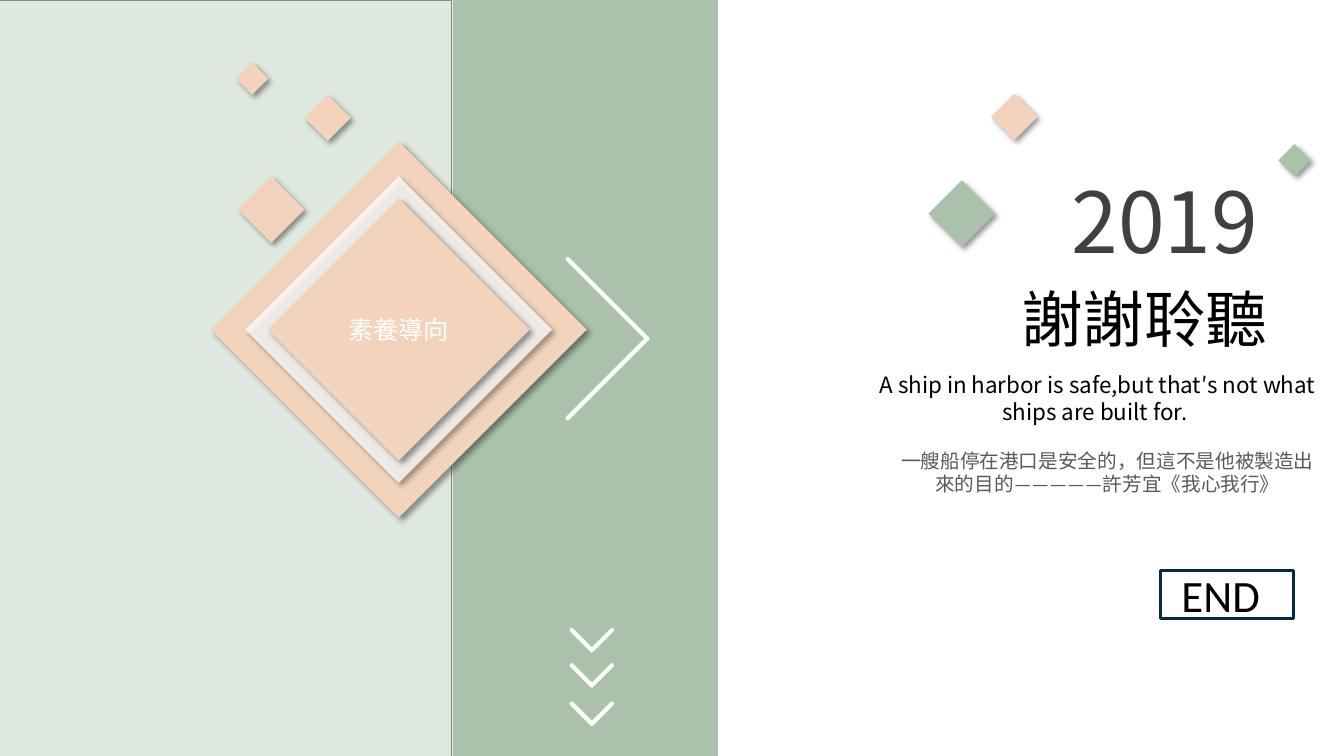
"""Build the closing slide: green panels, peach diamonds, chevrons and thanks."""
from dataclasses import dataclass

from lxml.etree import SubElement
from pptx import Presentation
from pptx.dml.color import RGBColor
from pptx.enum.shapes import MSO_CONNECTOR, MSO_SHAPE
from pptx.enum.text import MSO_ANCHOR, MSO_AUTO_SIZE, PP_ALIGN
from pptx.oxml.ns import qn
from pptx.util import Inches, Pt


@dataclass(frozen=True)
class Theme:
    green: str = "AAC2AC"
    edge: str = "7E907F"
    peach: str = "F3D3BC"
    white: str = "FFFFFF"
    black: str = "000000"
    charcoal: str = "404040"
    gray: str = "595959"
    navy: str = "072942"
    sans: str = "Noto Sans CJK SC"
    latin: str = "Calibri"
    serif: str = "TeX Gyre Schola"
    year: int = 60
    thanks: int = 44
    end: int = 32
    label: int = 18
    quote: int = 16
    source: int = 14


theme = Theme()
presentation = Presentation()
presentation.slide_width = Inches(13.33)
presentation.slide_height = Inches(7.5)
slide = presentation.slides.add_slide(presentation.slide_layouts[6])
cell = presentation.slide_height / 75


def add_block(preset, left, top, width, height, fill=None, opacity=100):
    """Add a preset shape in grid cells, with an optional fill and no line."""
    shape = slide.shapes.add_shape(preset, *(round(n * cell) for n in (left, top, width, height)))
    shape.shadow.inherit = False
    shape.line.fill.background()
    if fill is None:
        shape.fill.background()
        return shape
    shape.fill.solid()
    shape.fill.fore_color.rgb = RGBColor.from_string(fill)
    if opacity < 100:
        color = shape._element.spPr.find(qn("a:solidFill"))[0]
        SubElement(color, qn("a:alpha"), val=str(opacity * 1000))
    return shape


def write_text(shape, text, font, size, color, alignment):
    """Write one formatted run in the first paragraph of a shape."""
    shape.text_frame.word_wrap = True
    paragraph = shape.text_frame.paragraphs[0]
    paragraph.alignment = alignment
    run = paragraph.add_run()
    run.text = text
    run.font.name = font
    run.font.size = Pt(size)
    run.font.color.rgb = RGBColor.from_string(color)
    SubElement(run._r.get_or_add_rPr(), qn("a:ea"), typeface=font)


left_panel = add_block(MSO_SHAPE.RECTANGLE, -1.5, 0, 46.3, 76.8, theme.green, 37)
left_panel.line.color.rgb = RGBColor.from_string(theme.edge)
left_panel.line.width = Pt(1)
add_block(MSO_SHAPE.RECTANGLE, 44.9, 0, 26.3, 75, theme.green)

emblem_x, emblem_y = 39.55, 32.7
diamonds = [
    (emblem_x, emblem_y, 37.3, theme.peach, 100, ""),
    (emblem_x, emblem_y, 30.4, theme.white, 81, ""),
    (emblem_x, emblem_y, 26, theme.peach, 100, "素養導向"),
    (26.9, 20.8, 6.6, theme.peach, 100, ""),
    (32.5, 11.7, 4.6, theme.peach, 100, ""),
    (25, 7.8, 3.2, theme.peach, 100, ""),
    (95.4, 21.2, 6.6, theme.green, 100, ""),
    (100.6, 11.6, 4.6, theme.peach, 100, ""),
    (128.4, 15.9, 3.2, theme.green, 100, ""),
]
for center_x, center_y, side, fill, opacity, label in diamonds:
    diamond = add_block(MSO_SHAPE.DIAMOND, center_x - side / 2, center_y - side / 2,
                        side, side, fill, opacity)
    effects = diamond._element.spPr.find(qn("a:effectLst"))
    shadow = SubElement(effects, qn("a:outerShdw"), blurRad=str(Pt(4)), dist=str(Pt(3)),
                        dir=str(45 * 60000), algn="tl", rotWithShape="0")
    shadow_color = SubElement(shadow, qn("a:srgbClr"), val=theme.black)
    SubElement(shadow_color, qn("a:alpha"), val="40000")
    if label:
        diamond.text_frame.vertical_anchor = MSO_ANCHOR.MIDDLE
        write_text(diamond, label, theme.serif, theme.label, theme.white, PP_ALIGN.CENTER)

side_chevron = [[(56.3, 41.5), (64.2, 33.6), (56.3, 25.7)]]
down_chevrons = [[(60.7, top), (58.7, top + 2), (56.7, top)] for top in (62.5, 66, 69.8)]
for chevrons in (side_chevron, down_chevrons):
    group = slide.shapes.add_group_shape()
    for points in chevrons:
        for start, finish in zip(points, points[1:]):
            stroke = group.shapes.add_connector(
                MSO_CONNECTOR.STRAIGHT, *(round(n * cell) for n in start + finish))
            stroke.line.color.rgb = RGBColor.from_string(theme.white)
            stroke.line.width = Pt(3)
            stroke.line._get_or_add_ln().set("cap", "rnd")
            SubElement(stroke._element.spPr, qn("a:effectLst"))

end_frame = add_block(MSO_SHAPE.RECTANGLE, 115.1, 56.6, 13.2, 4.8)
end_frame.line.color.rgb = RGBColor.from_string(theme.navy)
end_frame.line.width = Pt(2.25)

captions = [
    (105.3, 16.3, 27.7, 11.1, "2019", theme.sans, theme.year, theme.charcoal, PP_ALIGN.LEFT),
    (100.3, 27.4, 56, 8.4, "謝謝聆聽", theme.sans, theme.thanks, theme.black, PP_ALIGN.LEFT),
    (83.6, 36.3, 50.5, 6.4, "A ship in harbor is safe,but that′s not what ships are built for. ",
     theme.sans, theme.quote, theme.black, PP_ALIGN.CENTER),
    (87.8, 44, 44.1, 5.7, "一艘船停在港口是安全的，但這不是他被製造出來的目的—————許芳宜《我心我行》",
     theme.latin, theme.source, theme.gray, PP_ALIGN.CENTER),
    (116.2, 55.8, 12, 6.4, "END", theme.latin, theme.end, theme.black, PP_ALIGN.LEFT),
]
for left, top, width, height, *content in captions:
    text_box = slide.shapes.add_textbox(*(round(n * cell) for n in (left, top, width, height)))
    text_box.text_frame.auto_size = MSO_AUTO_SIZE.SHAPE_TO_FIT_TEXT
    write_text(text_box, *content)

presentation.save("out.pptx")
